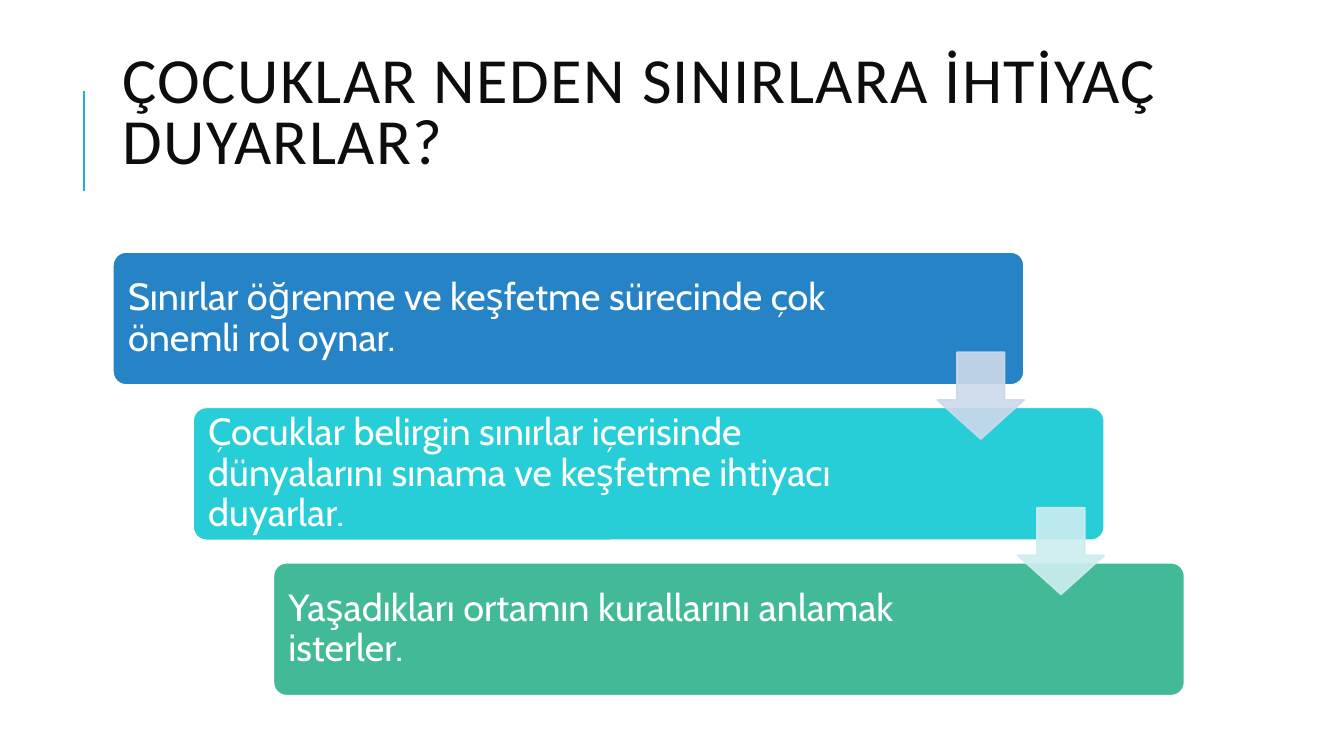
from pptx import Presentation
from pptx.dml.color import RGBColor
from pptx.enum.shapes import MSO_CONNECTOR as Line, MSO_SHAPE as Kind
from pptx.enum.text import MSO_ANCHOR as Anchor, PP_ALIGN as Align
from pptx.oxml.ns import qn
from pptx.util import Inches, Pt
from lxml.etree import SubElement

WHITE = RGBColor(0xFF, 0xFF, 0xFF)
INK = RGBColor(0x0D, 0x0D, 0x0D)
SKY = RGBColor(0x1C, 0xAD, 0xE4)
BLUE = RGBColor(0x26, 0x83, 0xC6)
CYAN = RGBColor(0x27, 0xCE, 0xD7)
GREEN = RGBColor(0x42, 0xBA, 0x97)
PALE_BLUE = RGBColor(0xCD, 0xD9, 0xEA)
PALE_CYAN = RGBColor(0xCD, 0xED, 0xF0)


def write(frame, text, font="Cabin", size=27, color=WHITE, lead=0.9, track=0):
    frame.word_wrap = True
    frame.vertical_anchor = Anchor.MIDDLE
    para = frame.paragraphs[0]
    para.alignment = Align.LEFT
    para.line_spacing = lead
    run = para.add_run()
    run.text = text
    run.font.name = font
    run.font.size = Pt(size)
    run.font.color.rgb = color
    if track:
        run.font._element.set("spc", str(track * 100))


class Deck:
    """Lengths are percentages of the slide's width and height."""

    def __init__(self):
        self.prs = Presentation()
        self.prs.slide_width = Inches(13.33)
        self.prs.slide_height = Inches(7.5)
        self.slide = self.prs.slides.add_slide(self.prs.slide_layouts[6])
        self.shapes = self.slide.shapes

    def place(self, x, y, w, h):
        wide, high = self.prs.slide_width, self.prs.slide_height
        return [round(v * full / 100)
                for v, full in ((x, wide), (y, high), (w, wide), (h, high))]

    def shape(self, kind, box, fill, edge, adjust, alpha=None):
        item = self.shapes.add_shape(kind, *self.place(*box))
        item.shadow.inherit = False
        for i, value in enumerate(adjust):
            item.adjustments[i] = value
        item.fill.solid()
        item.fill.fore_color.rgb = fill
        item.line.color.rgb = edge
        item.line.width = Pt(1.25)
        if alpha:
            for color in item._element.spPr.iter(qn("a:srgbClr")):
                SubElement(color, qn("a:alpha")).set("val", str(alpha * 1000))

    def text(self, box, text, inset=0.11, foot=None, **style):
        frame = self.shapes.add_textbox(*self.place(*box)).text_frame
        frame.margin_left = frame.margin_right = Inches(inset)
        frame.margin_top = Inches(inset)
        frame.margin_bottom = Inches(inset if foot is None else foot)
        write(frame, text, **style)

    def rule(self, x, top, end, color):
        left, y1, _, y2 = self.place(x, top, 0, end)
        line = self.shapes.add_connector(Line.STRAIGHT, left, y2, left, y1)
        line.line.color.rgb = color
        line.line.width = Pt(1.5)
        SubElement(line._element.spPr, qn("a:effectLst"))


def main():
    deck = Deck()

    # Title and accent rule
    deck.rule(6.23, 12, 25.33, SKY)
    deck.text((8.4, 8.53, 79.75, 21.87),
              "ÇOCUKLAR NEDEN SINIRLARA İHTİYAÇ DUYARLAR?",
              inset=0.1, foot=0.73, font="Calibri", size=46, color=INK,
              lead=0.8, track=1)

    # Staircase of cards
    left, top, right, down = 8.4, 33.33, 5.97, 20.55
    cards = [
        (BLUE, 57.1,
         "Sınırlar öğrenme ve keşfetme sürecinde çok önemli rol oynar."),
        (CYAN, 54.76,
         "Çocuklar belirgin sınırlar içerisinde dünyalarını sınama ve "
         "keşfetme ihtiyacı duyarlar."),
        (GREEN, 54.76, "Yaşadıkları ortamın kurallarını anlamak isterler."),
    ]
    for i, (fill, wide, text) in enumerate(cards):
        x, y = left + i * right, top + i * down
        deck.shape(Kind.ROUNDED_RECTANGLE, (x, y, 67.8, 17.6), fill, WHITE,
                   [0.1])
        deck.text((x + 0.3, y + 0.53, wide, 16.53), text)

    # Arrows from each card to the next
    for i, tint in enumerate((PALE_BLUE, PALE_CYAN)):
        box = (69.75 + i * right, 46.6 + i * down, 6.45, 11.47)
        deck.shape(Kind.DOWN_ARROW, box, tint, tint, [0.55, 0.45], alpha=90)

    deck.prs.save("out.pptx")


if __name__ == "__main__":
    main()
